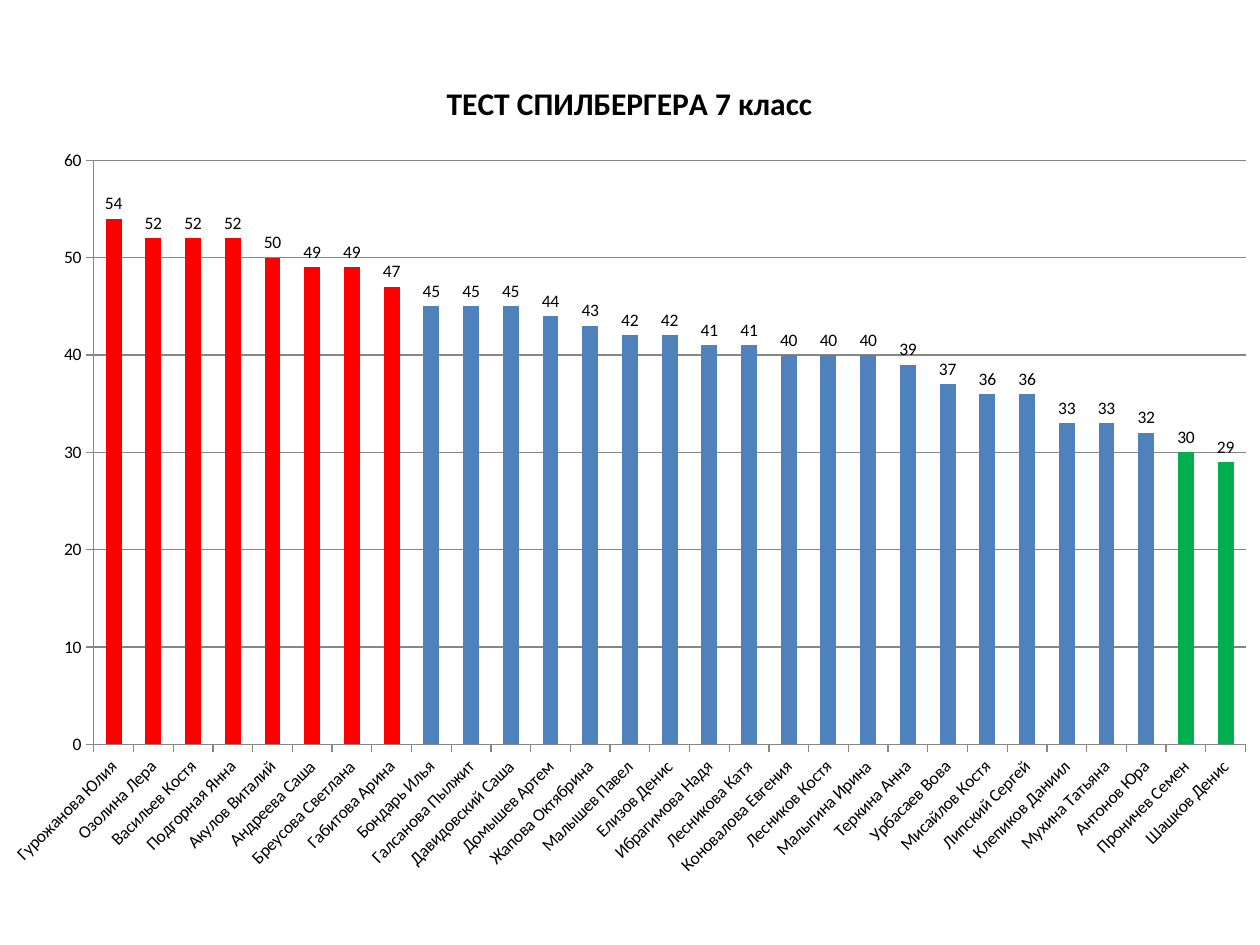
"""Build a slide with a column chart of Spielberger test scores for grade 7."""
from lxml.etree import SubElement
from pptx import Presentation
from pptx.chart.data import CategoryChartData
from pptx.dml.color import RGBColor
from pptx.enum.chart import XL_CHART_TYPE, XL_LABEL_POSITION, XL_TICK_MARK
from pptx.oxml.ns import qn
from pptx.util import Cm, Pt

TITLE = "ТЕСТ СПИЛБЕРГЕРА 7 класс"
SCORES = [
    ("Гурожанова Юлия", 54), ("Озолина Лера", 52), ("Васильев Костя", 52),
    ("Подгорная Янна", 52), ("Акулов Виталий", 50), ("Андреева Саша", 49),
    ("Бреусова Светлана", 49), ("Габитова Арина", 47), ("Бондарь Илья", 45),
    ("Галсанова Пылжит", 45), ("Давидовский Саша", 45), ("Домышев Артем", 44),
    ("Жапова Октябрина", 43), ("Малышев Павел", 42), ("Елизов Денис", 42),
    ("Ибрагимова Надя", 41), ("Лесникова Катя", 41), ("Коновалова Евгения", 40),
    ("Лесников Костя", 40), ("Малыгина Ирина", 40), ("Теркина Анна", 39),
    ("Урбасаев Вова", 37), ("Мисайлов Костя", 36), ("Липский Сергей", 36),
    ("Клепиков Даниил", 33), ("Мухина Татьяна", 33), ("Антонов Юра", 32),
    ("Проничев Семен", 30), ("Шашков Денис", 29),
]
HIGH, LOW = 46, 30
WIDTH, HEIGHT = 25.88, 16.92
RED = RGBColor(0xFF, 0x00, 0x00)
BLUE = RGBColor(0x4F, 0x81, 0xBD)
GREEN = RGBColor(0x00, 0xB0, 0x50)
GRAY = RGBColor(0x86, 0x86, 0x86)
BLACK = RGBColor(0x00, 0x00, 0x00)


def place(node, index, **spots):
    old = node.find(qn("c:layout"))
    if old is not None:
        node.remove(old)
    layout = SubElement(node, qn("c:layout"))
    node.insert(index, layout)
    manual = SubElement(layout, qn("c:manualLayout"))
    for tag, val in spots.items():
        SubElement(manual, qn(f"c:{tag}")).set("val", str(val))


def style(font, size, bold=False):
    font.name = "Calibri"
    font.size = Pt(size)
    font.bold = bold
    font.color.rgb = BLACK


def add_title(chart):
    title = chart.chart_title
    title.text_frame.text = TITLE
    style(title.text_frame.paragraphs[0].runs[0].font, 18, True)
    node = title._element
    place(node, 1, xMode="edge", yMode="edge", x=9.12 / WIDTH, y=0.46 / HEIGHT)
    node.find(qn("c:overlay")).set("val", "1")


def set_axes(chart):
    names, values = chart.category_axis, chart.value_axis
    for axis in (names, values):
        axis.major_tick_mark = XL_TICK_MARK.OUTSIDE
        axis.minor_tick_mark = XL_TICK_MARK.NONE
        axis.format.line.color.rgb = GRAY
        style(axis.tick_labels.font, 10)
    names._element.txPr.bodyPr.set("rot", "-2700000")
    values.minimum_scale, values.maximum_scale = 0, 60
    values.major_unit = 10
    values.has_major_gridlines = True
    values.major_gridlines.format.line.color.rgb = GRAY


def set_bars(chart):
    plot = chart.plots[0]
    plot.gap_width = 150
    plot.vary_by_categories = False
    bars = plot.series[0]
    bars.format.fill.solid()
    bars.format.fill.fore_color.rgb = BLUE
    for i, (_, score) in enumerate(SCORES):
        if score > HIGH or score <= LOW:
            fill = bars.points[i].format.fill
            fill.solid()
            fill.fore_color.rgb = RED if score > HIGH else GREEN
    labels = bars.data_labels
    labels.show_value = True
    labels.position = XL_LABEL_POSITION.OUTSIDE_END
    style(labels.font, 10)


def main():
    deck = Presentation()
    deck.slide_width, deck.slide_height = Cm(25.4), Cm(19.05)
    slide = deck.slides.add_slide(deck.slide_layouts[6])
    data = CategoryChartData()
    data.categories = [name for name, _ in SCORES]
    data.add_series("Series 1", [score for _, score in SCORES])
    chart = slide.shapes.add_chart(
        XL_CHART_TYPE.COLUMN_CLUSTERED,
        Cm(-0.23), Cm(1.07), Cm(WIDTH), Cm(HEIGHT), data).chart
    chart.has_legend = False
    style(chart.font, 10)
    add_title(chart)
    set_axes(chart)
    set_bars(chart)
    place(chart._chartSpace.chart.plotArea, 0, layoutTarget="inner",
          xMode="edge", yMode="edge", x=2.12 / WIDTH, y=2.16 / HEIGHT,
          w=23.22 / WIDTH, h=11.78 / HEIGHT)
    deck.save("out.pptx")


if __name__ == "__main__":
    main()
